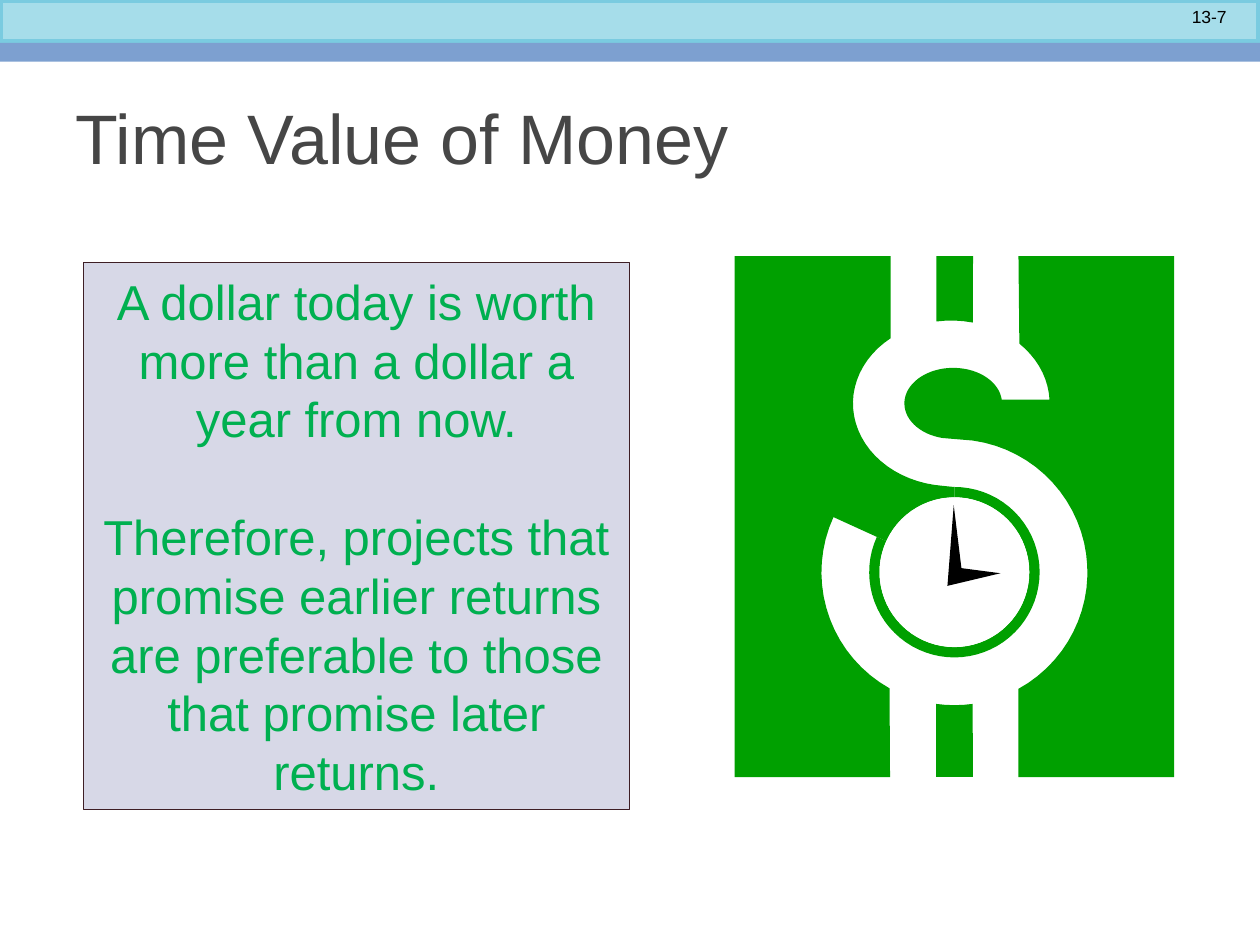
from math import cos, radians, sin

from pptx import Presentation
from pptx.dml.color import RGBColor as Rgb
from pptx.enum.shapes import MSO_SHAPE as Shape
from pptx.enum.text import MSO_ANCHOR as Anchor, PP_ALIGN as Align
from pptx.util import Pt

COLORS = {
    "sky": "A6DDEA",
    "sky_edge": "7ACBE0",
    "band": "7DA0D0",
    "title": "464646",
    "panel": "D7D8E7",
    "panel_edge": "3E1E25",
    "message": "00B050",
    "money": "00A000",
    "white": "FFFFFF",
    "black": "000000",
}
TITLE_ONLY = 5
TOP, BOTTOM, LEFT, RIGHT = 146.4, 444, 419.8, 671
STEM_LEFT, STEM_RIGHT = 535, 556
UPPER_BOWL = (543.6, 230.5, 56.2, 47.3)
UPPER_HOLE = (544.7, 230.5, 27.9, 20.3)
LOWER_BOWL = (545.4, 327, 76, 76)
RING = (545.4, 327, 48.7, 48.7)
CLOCK = (545.4, 327, 42.8, 42.8)


def arc(ellipse, start, end):
    x, y, radius_x, radius_y = ellipse
    steps = max(4, round(abs(end - start) / 5))
    angles = [radians(start + (end - start) * i / steps) for i in range(steps + 1)]
    return [(x + radius_x * cos(a), y + radius_y * sin(a)) for a in angles]


class SlideBuilder:
    font = "Arial"

    def __init__(self, deck):
        self.page = deck.slides.add_slide(deck.slide_layouts[TITLE_ONLY])

    def place(self, item, left, top, width, height):
        values = {"left": left, "top": top, "width": width, "height": height}
        for name, value in values.items():
            setattr(item, name, Pt(value))

    def paint(self, item, fill, line=None, weight=0):
        item.shadow.inherit = False
        item.fill.solid()
        item.fill.fore_color.rgb = Rgb.from_string(COLORS[fill])
        if line:
            item.line.color.rgb = Rgb.from_string(COLORS[line])
            item.line.width = Pt(weight)
        else:
            item.line.fill.background()

    def set_text(self, item, texts, size, color, align, anchor, **spacing):
        frame = item.text_frame
        for name, value in {"word_wrap": True, "vertical_anchor": anchor}.items():
            setattr(frame, name, value)
        for index, text in enumerate(texts):
            para = frame.add_paragraph() if index else frame.paragraphs[0]
            para.alignment = align
            for name, value in spacing.items():
                if index or name != "space_before":
                    setattr(para, name, Pt(value))
            span = para.add_run()
            span.text = text
            for name, value in {"name": self.font, "size": Pt(size)}.items():
                setattr(span.font, name, value)
            span.font.color.rgb = Rgb.from_string(COLORS[color])

    def title(self, text, *bounds):
        box = self.page.shapes.title
        self.place(box, *bounds)
        self.set_text(box, [text], 40, "title", Align.LEFT, Anchor.MIDDLE)

    def rectangle(self, bounds, fill, line=None, weight=0):
        box = self.page.shapes.add_shape(Shape.RECTANGLE, *map(Pt, bounds))
        self.paint(box, fill, line, weight)
        return box

    def label(self, text, *bounds):
        box = self.page.shapes.add_textbox(*map(Pt, bounds))
        self.set_text(box, [text], 10, "black", Align.RIGHT, Anchor.TOP)

    def drawing(self, outlines):
        group = self.page.shapes.add_group_shape()
        for points, fill in outlines:
            corners = [(Pt(x), Pt(y)) for x, y in points]
            builder = group.shapes.build_freeform(*corners[0], scale=1.0)
            builder.add_line_segments(corners[1:], close=True)
            self.paint(builder.convert_to_shape(), fill)


def dollar_clock():
    upper_stem = [(STEM_LEFT, TOP), *arc(UPPER_BOWL, -98.8, -77.4), (STEM_RIGHT, TOP)]
    lower_stem = [(STEM_LEFT, BOTTOM), *arc(LOWER_BOWL, 97.9, 82.1), (STEM_RIGHT, BOTTOM)]
    right_panel = [
        (RIGHT, BOTTOM), (582, BOTTOM),
        *arc(LOWER_BOWL, 61.2, -82),
        *arc(UPPER_HOLE, 103, 354),
        *arc(UPPER_BOWL, -2.6, -46.2),
        (582, TOP), (RIGHT, TOP),
    ]
    left_panel = [
        (LEFT, TOP), (509, TOP),
        *arc(UPPER_BOWL, 232, 95),
        (545.4, 278.3),
        *arc(CLOCK, 270, 204.5),
        *arc(LOWER_BOWL, 204.5, 119.2),
        (508.6, BOTTOM), (LEFT, BOTTOM),
    ]
    ring = arc(CLOCK, 204.5, -90) + arc(RING, -90, 204.5)
    hands = [(549.4, 324.7), (545, 288.7), (541.4, 334.8), (571.7, 327.6)]
    panels = [upper_stem, right_panel, lower_stem, left_panel, ring]
    return [(points, "money") for points in panels] + [
        (arc(CLOCK, 0, 355), "white"),
        (hands, "black"),
    ]


def main():
    deck = Presentation()
    deck.slide_width, deck.slide_height = Pt(720), Pt(540)
    builder = SlideBuilder(deck)
    builder.rectangle((0, 0, 720, 24.2), "sky", "sky_edge", 4)
    builder.rectangle((0, 28.8, 720, 6.5), "band")
    builder.rectangle((0, 24.5, 720, 7.2), "band")
    builder.label("13-7", 612, 0, 96, 19.4)
    builder.title("Time Value of Money", 36, 36, 648, 84)
    builder.drawing(dollar_clock())
    message = builder.rectangle((47.6, 150, 312, 312.5), "panel", "panel_edge", 0.75)
    builder.set_text(
        message,
        [
            "A dollar today is worth more than a dollar a year from now.",
            "Therefore, projects that promise earlier returns are preferable "
            "to those that promise later returns.",
        ],
        28, "message", Align.CENTER, Anchor.MIDDLE,
        line_spacing=33.6, space_before=33.6,
    )
    deck.save("out.pptx")


if __name__ == "__main__":
    main()
